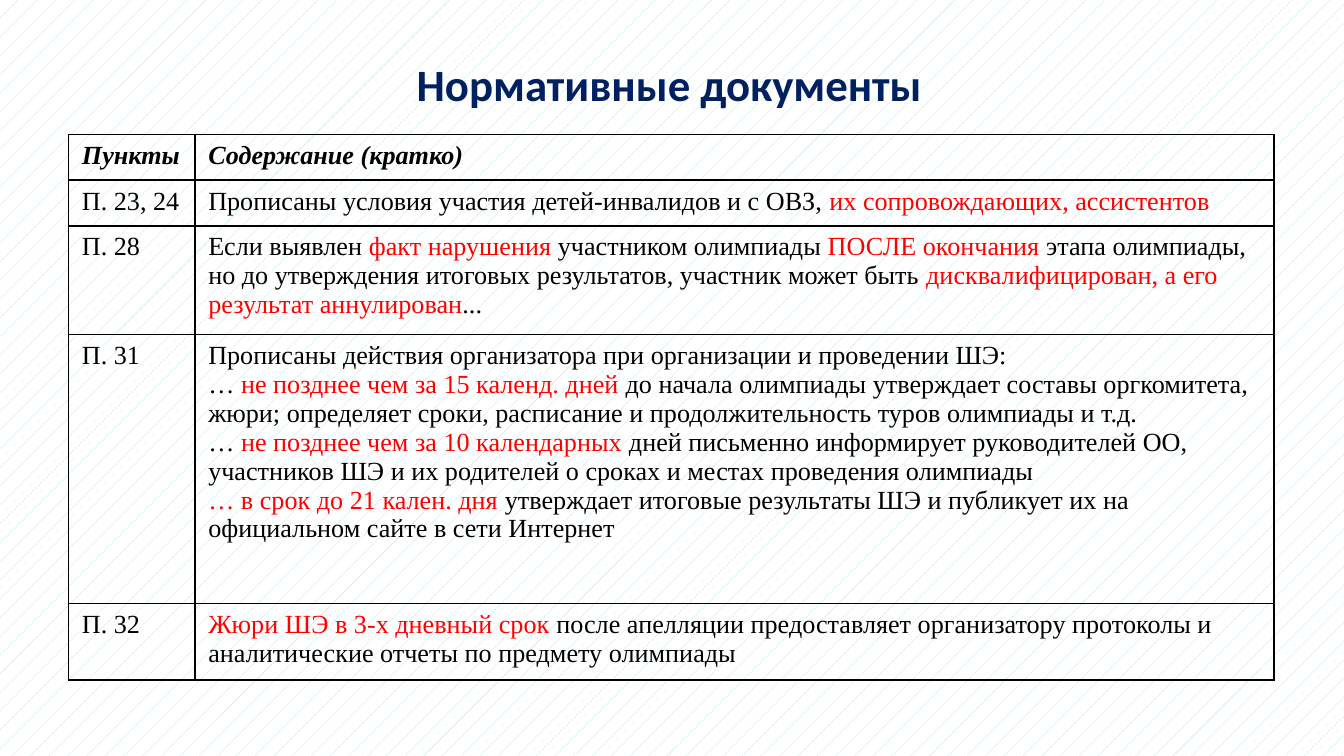
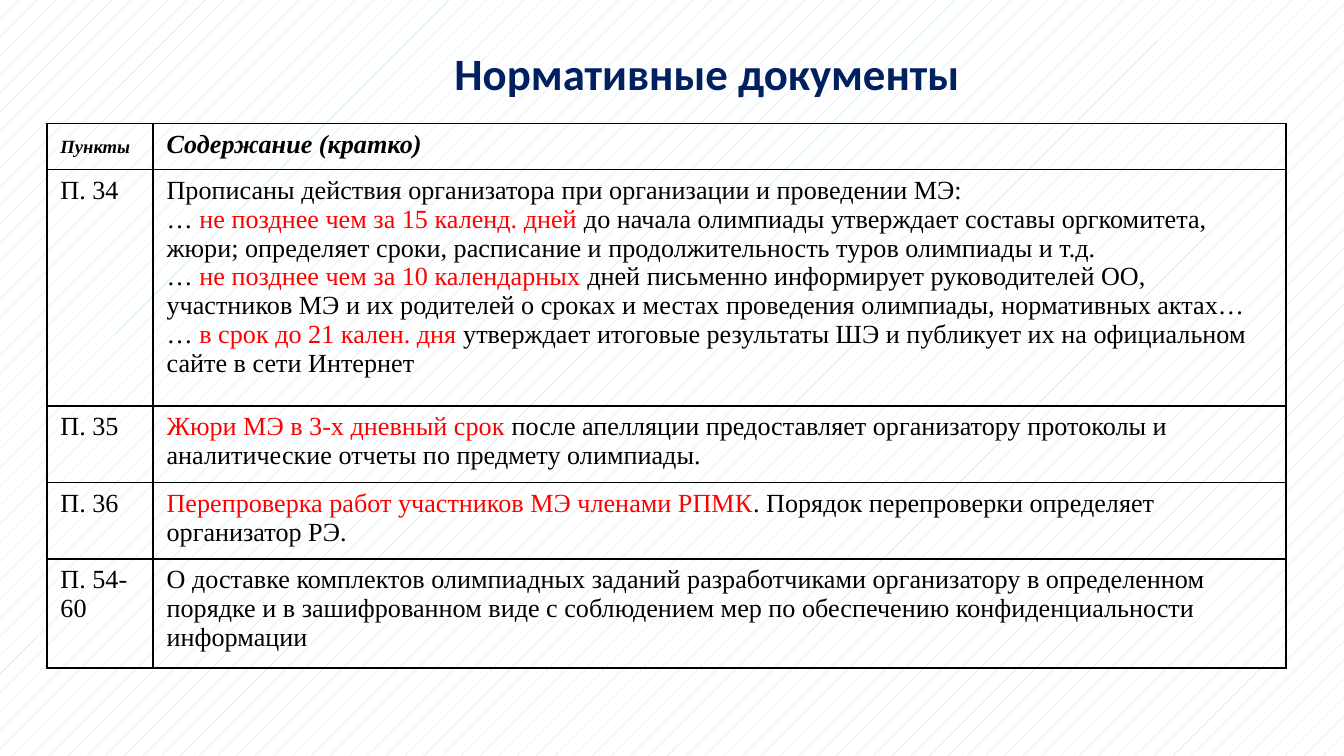
from dataclasses import dataclass

from lxml import etree
from pptx import Presentation
from pptx import util as u
from pptx.dml.color import RGBColor
from pptx.enum import dml, text
from pptx.oxml import ns


@dataclass(frozen=True)
class Theme:
    navy = RGBColor.from_string("002060")
    red = RGBColor.from_string("FF0000")
    black = RGBColor.from_string("000000")
    white = RGBColor.from_string("FFFFFF")
    pattern = RGBColor.from_string("BBE0E3")
    title_font = "Calibri"
    body_font = "Times New Roman"
    title_size = 24
    body_size = 14
    small_size = 10
    border = 1


theme = Theme()


def add_run(p, content, size=theme.body_size, font=theme.body_font,
            color=theme.black, bold=False, italic=False):
    r = p.add_run()
    r.text = content
    r.font.size = u.Pt(size)
    r.font.name = font
    r.font.color.rgb = color
    r.font.bold = bold
    r.font.italic = italic


def add_borders(cell):
    tc_pr = cell._tc.get_or_add_tcPr()
    for i, side in enumerate(("lnL", "lnR", "lnT", "lnB")):
        ln = etree.Element(ns.qn(f"a:{side}"), w=str(u.Pt(theme.border)))
        fill = etree.SubElement(ln, ns.qn("a:solidFill"))
        etree.SubElement(fill, ns.qn("a:srgbClr"), val=str(theme.black))
        tc_pr.insert(i, ln)


deadlines = [
    "… *не позднее чем за 15 календ. дней *до начала олимпиады утверждает составы "
    "оргкомитета, жюри; определяет сроки, расписание и продолжительность туров "
    "олимпиады и т.д.",
    "… *не позднее чем за 10 календарных *дней письменно информирует руководителей ОО, "
    "участников {} и их родителей о сроках и местах проведения олимпиады{}",
    "{}в срок до 21 кален. дня *утверждает итоговые результаты ШЭ и публикует их "
    "на официальном сайте в сети Интернет",
]
organizer = "Прописаны действия организатора при организации и проведении {}:"
jury = ("*Жюри {} в 3-х дневный срок *после апелляции предоставляет организатору "
        "протоколы и аналитические отчеты по предмету олимпиады{}")

slides = [
    dict(
        title_at=(1.93, 0.37, 6.1, 0.5),
        table_at=(0.51, 1),
        cols=(0.94, 8.03),
        header_size=theme.body_size,
        rows=[
            (0.34, "П. 23, 24", [
                "Прописаны условия участия детей-инвалидов и с ОВЗ, "
                "*их сопровождающих, ассистентов"]),
            (0.81, "П. 28", [
                "Если выявлен *факт нарушения *участником олимпиады *ПОСЛЕ окончания "
                "*этапа олимпиады, но до утверждения итоговых результатов, участник "
                "может быть *дисквалифицирован, а его результат аннулирован*..."]),
            (2, "П. 31", [
                organizer.format("ШЭ"), deadlines[0],
                deadlines[1].format("ШЭ", ""), deadlines[2].format("*… ")]),
            (0.57, "П. 32", [jury.format("ШЭ", "")]),
        ],
    ),
    dict(
        title_at=(2.17, 0.29, 6.18, 0.5),
        table_at=(0.35, 0.92),
        cols=(0.79, 8.43),
        header_size=theme.small_size,
        rows=[
            (1.76, "П. 34", [
                organizer.format("МЭ"), deadlines[0],
                deadlines[1].format("МЭ", ", нормативных актах…"),
                deadlines[2].format("… *")]),
            (0.57, "П. 35", [jury.format("МЭ", ".")]),
            (0.57, "П. 36", [
                "*Перепроверка работ участников МЭ членами РПМК*. "
                "Порядок перепроверки определяет организатор РЭ."]),
            (0.81, "П. 54-60", [
                "О доставке комплектов олимпиадных заданий разработчиками организатору "
                "в определенном порядке и в зашифрованном виде с соблюдением мер "
                "по обеспечению конфиденциальности информации"]),
        ],
    ),
]

prs = Presentation()
prs.slide_width = u.Inches(10)
prs.slide_height = u.Inches(10 * 9 / 16)

bg = prs.slide_master.background.fill
bg.patterned()
bg.pattern = dml.MSO_PATTERN.PERCENT_5
bg.fore_color.rgb = theme.pattern
bg.back_color.rgb = theme.white

for content in slides:
    s = prs.slides.add_slide(prs.slide_layouts[6])

    sp = s.shapes.add_textbox(*map(u.Inches, content["title_at"]))
    tf = sp.text_frame
    tf.word_wrap = True
    tf.vertical_anchor = text.MSO_ANCHOR.MIDDLE
    p = tf.paragraphs[0]
    p.alignment = text.PP_ALIGN.CENTER
    add_run(p, "Нормативные документы", size=theme.title_size,
            font=theme.title_font, color=theme.navy, bold=True)

    rows = [(0.34, "Пункты", ["Содержание (кратко)"])] + content["rows"]
    size = (sum(content["cols"]), sum(row[0] for row in rows))
    table = s.shapes.add_table(
        len(rows), 2, *map(u.Inches, content["table_at"] + size)).table
    table.first_row = False
    table.horz_banding = False
    for col, width in zip(table.columns, content["cols"]):
        col.width = u.Inches(width)

    for i, (height, clause, summary) in enumerate(rows):
        table.rows[i].height = u.Inches(height)
        header = i == 0
        for j, lines in enumerate(([clause], summary)):
            cell = table.cell(i, j)
            cell.fill.background()
            add_borders(cell)
            tf = cell.text_frame
            for n, line in enumerate(lines):
                p = tf.add_paragraph() if n else tf.paragraphs[0]
                for k, part in enumerate(line.split("*")):
                    if part:
                        add_run(p, part, bold=header, italic=header,
                                color=theme.red if k % 2 else theme.black,
                                size=content["header_size"] if header and j == 0
                                else theme.body_size)
    if content["header_size"] < theme.body_size:
        add_run(table.cell(0, 0).text_frame.paragraphs[0], " ", bold=True, italic=True)

prs.save("out.pptx")
